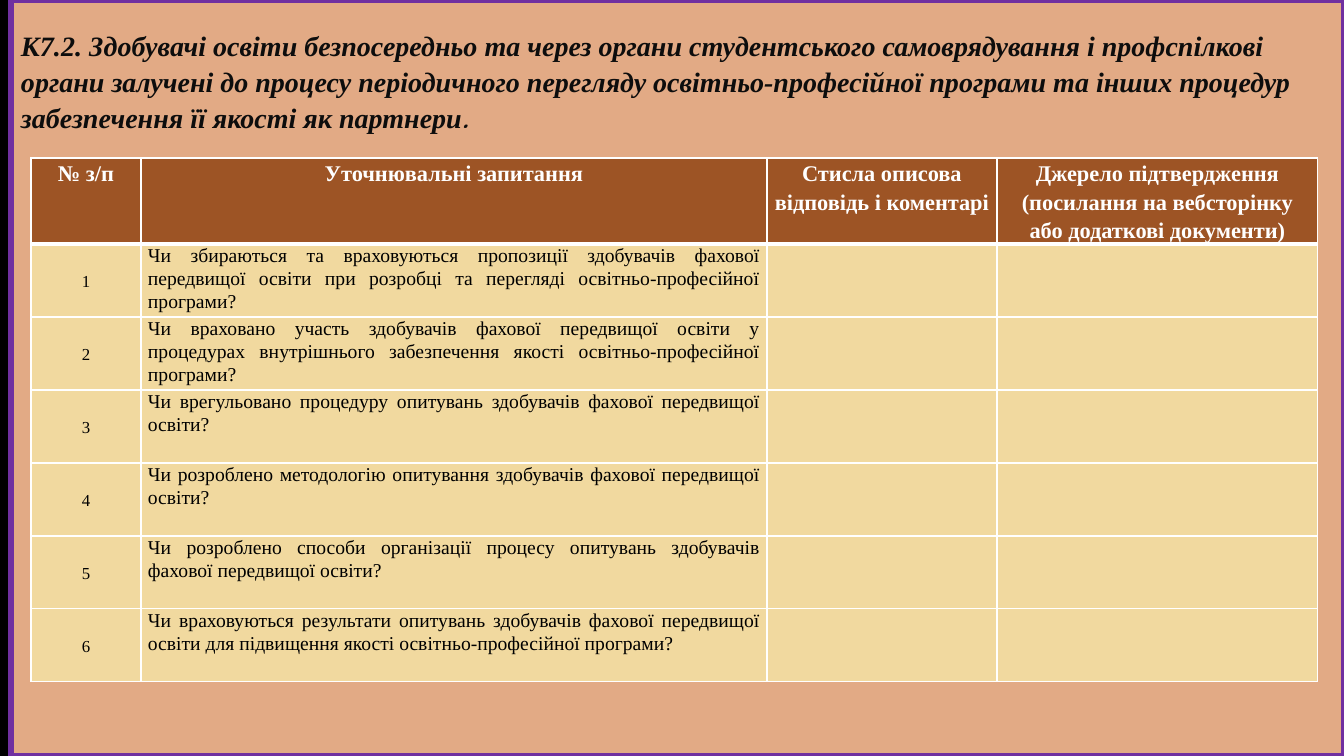
import pptx
import pptx.dml.color
import pptx.enum.shapes
import pptx.enum.text
import pptx.oxml
import pptx.oxml.ns
import pptx.util

PX = 12192000 / 1344
SERIF = "Times New Roman"
ALIGN = pptx.enum.text.PP_ALIGN
ANCHOR = pptx.enum.text.MSO_ANCHOR

TITLE = (
    "К7.2. Здобувачі освіти безпосередньо та через органи студентського "
    "самоврядування і профспілкові органи залучені до процесу періодичного "
    "перегляду освітньо-професійної програми та інших процедур забезпечення "
    "її якості як партнери"
)
HEADINGS = [
    "№ з/п",
    "Уточнювальні запитання",
    "Стисла описова відповідь і коментарі",
    "Джерело підтвердження\n(посилання на вебсторінку або додаткові документи)",
]
QUESTIONS = [
    "Чи збираються та враховуються пропозиції здобувачів фахової передвищої "
    "освіти при розробці та перегляді освітньо-професійної програми?",
    "Чи враховано участь здобувачів фахової передвищої освіти у процедурах "
    "внутрішнього забезпечення якості освітньо-професійної програми?",
    "Чи врегульовано процедуру опитувань здобувачів фахової передвищої освіти?",
    "Чи розроблено методологію опитування здобувачів фахової передвищої освіти?",
    "Чи розроблено способи організації процесу опитувань здобувачів фахової "
    "передвищої освіти?",
    "Чи враховуються результати опитувань здобувачів фахової передвищої освіти "
    "для підвищення якості освітньо-професійної програми?",
]
COLUMN_WIDTHS = [110, 626, 230, 321]
HEADER_HEIGHT, ROW_HEIGHT = 86, 73


def px(length):
    return pptx.util.Emu(round(length * PX))


def color(hex_code):
    return pptx.dml.color.RGBColor.from_string(hex_code)


def paint(fill, hex_code):
    fill.solid()
    fill.fore_color.rgb = color(hex_code)


def style_span(span, size, hex_code, font=SERIF, bold=False, italic=False):
    span.font.size = pptx.util.Pt(size)
    span.font.name = font
    span.font.bold = bold
    span.font.italic = italic
    span.font.color.rgb = color(hex_code)


def add_panel(page, left, top, width, height):
    panel = page.shapes.add_shape(
        pptx.enum.shapes.MSO_SHAPE.RECTANGLE,
        px(left), px(top), px(width), px(height))
    panel.shadow.inherit = False
    paint(panel.fill, "E2AA85")
    panel.line.color.rgb = color("7030A0")
    panel.line.width = pptx.util.Pt(4.5)
    # The title placeholder comes with the layout, so the panel goes behind it.
    tree = page.shapes.element
    tree.remove(panel.element)
    tree.insert(2, panel.element)


def place_title(page, left, top, width, height):
    title = page.shapes.title
    title.left, title.top = px(left), px(top)
    title.width, title.height = px(width), px(height)
    frame = title.text_frame
    frame.word_wrap = True
    frame.auto_size = pptx.enum.text.MSO_AUTO_SIZE.NONE
    frame.vertical_anchor = ANCHOR.TOP
    frame.margin_left = frame.margin_right = px(10)
    frame.margin_top = frame.margin_bottom = 0
    frame.text = TITLE
    para = frame.paragraphs[0]
    para.alignment = ALIGN.LEFT
    para.line_spacing = 1.07
    para.space_before = pptx.util.Pt(0)
    style_span(para.runs[0], 20, "0D0D0D", bold=True, italic=True)
    stop = para.add_run()
    stop.text = "."
    style_span(stop, 18, "0D0D0D", "Quicksand", bold=True, italic=True)


def border_cell(cell, top, bottom):
    """Draw white cell edges; top and bottom are widths in points."""
    properties = cell._tc.get_or_add_tcPr()
    edges = [("lnL", 1), ("lnR", 1), ("lnT", top), ("lnB", bottom)]
    for position, (tag, points) in enumerate(edges):
        properties.insert(position, pptx.oxml.parse_xml(
            f'<a:{tag} {pptx.oxml.ns.nsdecls("a")} w="{pptx.util.Pt(points)}">'
            '<a:solidFill><a:srgbClr val="FFFFFF"/></a:solidFill></a:'
            f'{tag}>'))


def fill_cell(cell, text, size, alignment, spacing, hex_code="000000", bold=False):
    cell.text_frame.text = text
    for para in cell.text_frame.paragraphs:
        para.alignment = alignment
        para.line_spacing = spacing
        for span in para.runs:
            style_span(span, size, hex_code, bold=bold)


def add_question_table(page, left, top):
    row_count = len(QUESTIONS) + 1
    frame = page.shapes.add_table(
        row_count, len(COLUMN_WIDTHS), px(left), px(top),
        px(sum(COLUMN_WIDTHS)), px(HEADER_HEIGHT + ROW_HEIGHT * len(QUESTIONS)))
    table = frame.table
    table.horz_banding = False
    for column, width in zip(table.columns, COLUMN_WIDTHS):
        column.width = px(width)
    for index, row in enumerate(table.rows):
        row.height = px(ROW_HEIGHT if index else HEADER_HEIGHT)
        for cell in row.cells:
            cell.margin_left = cell.margin_right = px(7)
            cell.margin_top = cell.margin_bottom = 0
            paint(cell.fill, "F1D99F" if index else "9D5425")
            border_cell(cell, 3 if index == 1 else 1, 1 if index else 3)
    for column, heading in enumerate(HEADINGS):
        fill_cell(table.cell(0, column), heading, 16, ALIGN.CENTER, 1.15,
                  "FFFFFF", bold=True)
    for number, question in enumerate(QUESTIONS, 1):
        number_cell = table.cell(number, 0)
        number_cell.vertical_anchor = ANCHOR.MIDDLE
        fill_cell(number_cell, str(number), 12, ALIGN.CENTER, 1.15)
        fill_cell(table.cell(number, 1), question, 14, ALIGN.JUSTIFY, 1.06)


def main():
    deck = pptx.Presentation()
    deck.slide_width, deck.slide_height = px(1344), px(756)
    page = deck.slides.add_slide(deck.slide_layouts[5])
    paint(page.background.fill, "000000")
    add_panel(page, 11, 0, 1333, 756)
    place_title(page, 11, 26, 1333, 104)
    add_question_table(page, 31, 158)
    deck.save("out.pptx")


if __name__ == "__main__":
    main()
